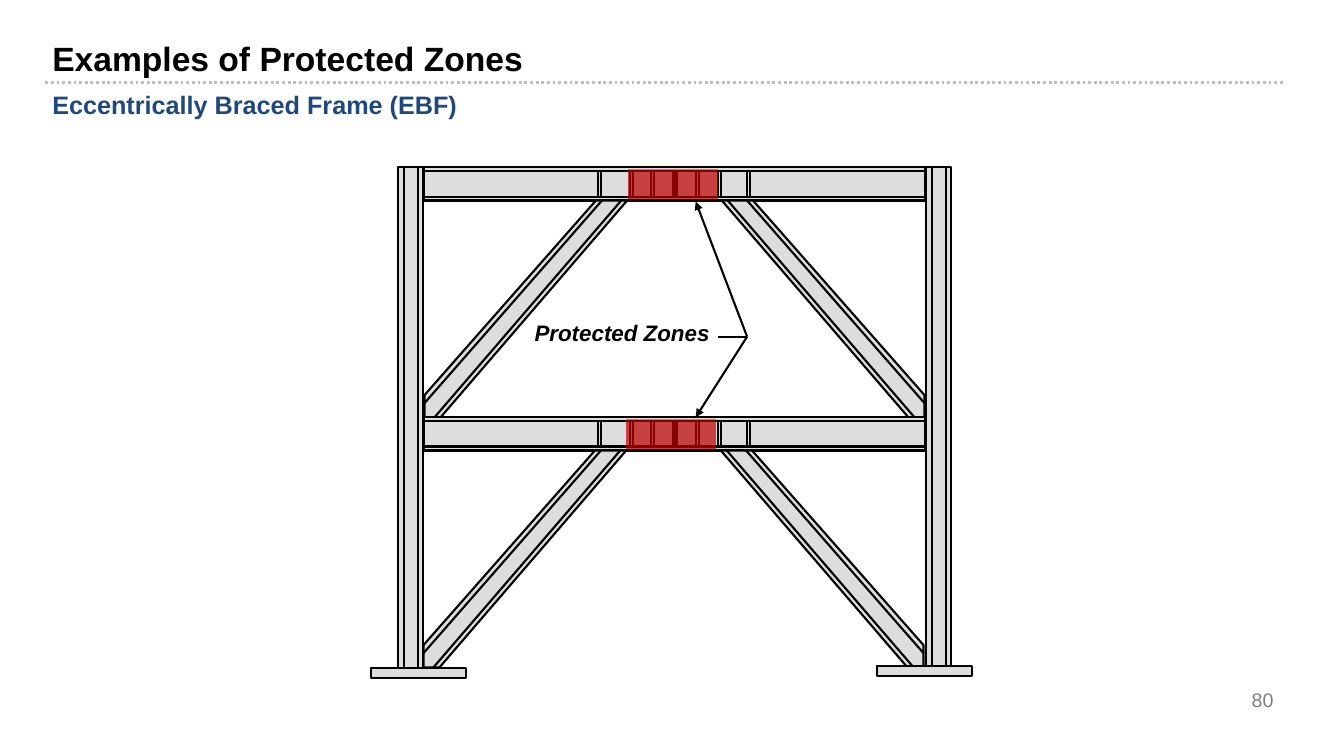
from dataclasses import dataclass

from lxml import etree
from pptx import Presentation
from pptx import util as u
from pptx.dml.color import RGBColor
from pptx.enum import dml, shapes, text
from pptx.oxml.ns import qn

PX = 9144  # EMU per px, 100 px to the inch


@dataclass(frozen=True)
class Theme:
    font: str = "Arial"
    ink: str = "000000"
    navy: str = "1F497D"
    gray: str = "7F7F7F"
    rule: str = "BFBFBF"
    steel: str = "DDDDDD"
    zone: str = "C00000"
    title: int = 24
    sub: int = 18
    label: int = 16
    page: int = 14
    edge: float = 1.5
    dots: int = 2


T = Theme()


def px(*vals):
    return [u.Emu(v * PX) for v in vals]


def put(obj, vals):
    for key, val in vals.items():
        setattr(obj, key, val)


# Kinds of element
def write(page, box, words, size, color, fmt=None, para=None, top=5,
          anchor=text.MSO_ANCHOR.TOP):
    frame = page.add_textbox(*px(*box)).text_frame
    put(frame, {"word_wrap": True, "vertical_anchor": anchor,
                "margin_top": px(top)[0]})
    line = frame.paragraphs[0]
    put(line, para or {})
    run = line.add_run()
    run.text = words
    put(run.font, {"name": T.font, "size": u.Pt(size), **(fmt or {})})
    run.font.color.rgb = RGBColor.from_string(color)


def paint(shape, color, edge=True):
    shape.shadow.inherit = False
    shape.fill.solid()
    shape.fill.fore_color.rgb = RGBColor.from_string(color)
    if edge:
        shape.line.color.rgb = RGBColor.from_string(T.ink)
        shape.line.width = u.Pt(T.edge)
    else:
        shape.line.fill.background()


def rect(page, box, color=T.steel, edge=True):
    shape = page.add_shape(shapes.MSO_SHAPE.RECTANGLE, *px(*box))
    paint(shape, color, edge)
    return shape


def poly(page, points):
    pen = page.build_freeform(*points[0], scale=PX)
    pen.add_line_segments(points[1:], close=True)
    paint(pen.convert_to_shape(), T.steel)


def line(page, start, end, color=T.ink, width=T.edge, dash=None, arrow=False):
    link = page.add_connector(shapes.MSO_CONNECTOR.STRAIGHT,
                              *px(*start, *end))
    link.line.color.rgb = RGBColor.from_string(color)
    put(link.line, {"width": u.Pt(width), "dash_style": dash})
    props = link.element.spPr
    if arrow:
        etree.SubElement(props.find(qn("a:ln")), qn("a:tailEnd"),
                         type="triangle")
    etree.SubElement(props, qn("a:effectLst"))


def tint(page, box):
    shape = rect(page, box, T.zone, edge=False)
    color = next(shape.element.spPr.iter(qn("a:srgbClr")))
    etree.SubElement(color, qn("a:alpha"), val="70000")


# Parts of the frame
def post(page, left):
    rect(page, (left, 166, 25, 499))
    for x in (left + 6, left + 20):
        line(page, (x, 166), (x, 665))


def beam(page, top):
    rect(page, (420, top, 498, 33))
    for y in (top + 4, top + 29):
        line(page, (420, y), (918, y))


def ribs(page, top):
    for left in (593, 625, 646, 668, 690, 712, 741):
        for x in (left, left + 3):
            line(page, (x, top + 4), (x, top + 29))


def brace(page, dx, top, flip):
    def at(x, y):
        return (1338 - x if flip else x) + dx, top + y

    poly(page, [at(716, 33), at(901, 248), at(917, 248),
                at(917, 226), at(747, 33)])
    line(page, at(741, 33), at(917, 234))
    line(page, at(721, 32), at(907, 248))


def main():
    deck = Presentation()
    put(deck, dict(zip(("slide_width", "slide_height"), px(1333, 750))))
    page = deck.slides.add_slide(deck.slide_layouts[6]).shapes

    # Headings and page number
    line(page, (45, 82), (1273, 82), T.rule, T.dots,
         dml.MSO_LINE.ROUND_DOT)
    bold = {"bold": True}
    write(page, (42, 29, 1228, 44), "Examples of Protected Zones",
          T.title, T.ink, bold, top=9)
    write(page, (42, 82, 1228, 49), "Eccentrically Braced Frame (EBF)",
          T.sub, T.navy, bold, top=7)
    write(page, (962, 674, 311, 40), "80", T.page, T.gray,
          para={"alignment": text.PP_ALIGN.RIGHT},
          anchor=text.MSO_ANCHOR.MIDDLE)
    write(page, (490, 312, 254, 37), "Protected Zones", T.label, T.ink,
          {"bold": True, "italic": True},
          {"alignment": text.PP_ALIGN.CENTER})

    # Steel frame
    steel = page.add_group_shape().shapes
    for left in (395, 918):
        post(steel, left)
    floors = ((0, 166), (-1, 414))
    for dx, top in floors:
        beam(steel, top)
        ribs(steel, top)
        for flip in (False, True):
            brace(steel, dx, top, flip)
    for left, top in ((368, 663), (870, 661)):
        rect(steel, (left, top, 94, 10))

    # Protected zones and their pointers
    for dx, top in floors:
        tint(page, (623 + 2 * dx, top + 2, 89, 30))
    bend = (741, 334)
    line(page, (712, 334), bend)
    for y in (200, 414):
        line(page, bend, (690, y), arrow=True)

    deck.save("out.pptx")


if __name__ == "__main__":
    main()
